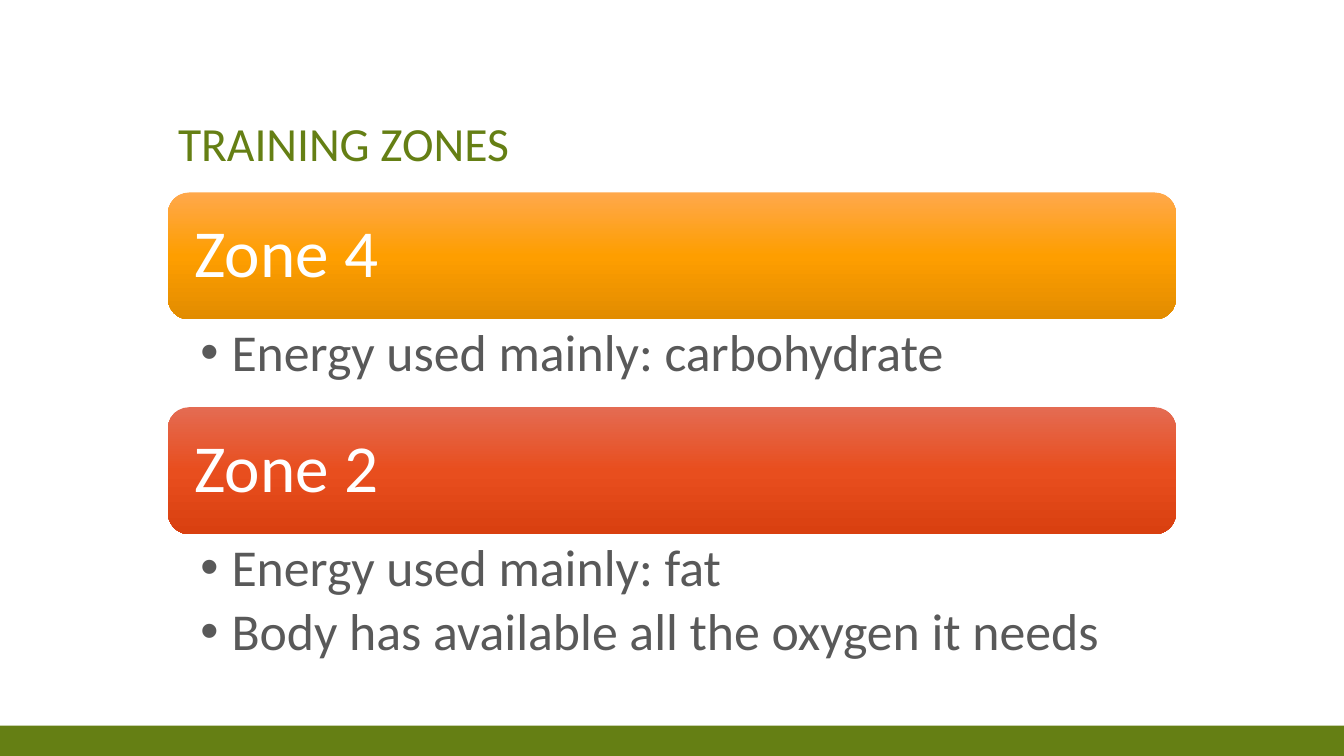
from dataclasses import dataclass

from lxml.etree import SubElement
from pptx import Presentation
from pptx.dml.color import RGBColor
from pptx.enum.shapes import MSO_SHAPE as Shape
from pptx.enum.text import MSO_ANCHOR as Anchor, MSO_AUTO_SIZE as Fit, PP_ALIGN as Align
from pptx.oxml.ns import qn
from pptx.util import Inches, Pt

WIDE, HIGH = 13.33, 7.5
COL = WIDE / 8  # eight columns: one of margin on each side


@dataclass(frozen=True)
class Theme:
    font: str = "Calibri"
    green: str = "657F14"
    white: str = "FFFFFF"
    grey: str = "595959"
    orange: tuple = ("FFA84B", "FE9E00", "E28C00")
    red: tuple = ("E46B52", "E84E1E", "D94010")
    title: int = 34
    head: int = 48
    body: int = 37


THEME = Theme()

ZONES = [
    ("Zone 4", THEME.orange, ["Energy used mainly: carbohydrate"], 0.87),
    ("Zone 2", THEME.red,
     ["Energy used mainly: fat", "Body has available all the oxygen it needs"], 1.41),
]


def place(shape, box):
    shape.left, shape.top, shape.width, shape.height = map(Inches, box)


def write(shape, lines, size, color, anchor=Anchor.TOP, pad=(0.1, 0.05, 0.1, 0.05),
          after=0, bullet=False):
    """Fill a shape with paragraphs; pad is left, top, right, bottom in inches."""
    frame = shape.text_frame
    frame.text = "\n".join(lines)
    frame.word_wrap, frame.auto_size = True, Fit.NONE
    frame.vertical_anchor = anchor
    (frame.margin_left, frame.margin_top,
     frame.margin_right, frame.margin_bottom) = map(Inches, pad)
    for para in frame.paragraphs:
        para.alignment = Align.LEFT
        para.line_spacing = 0.9
        para.space_before, para.space_after = Pt(0), Pt(after)
        font = para.runs[0].font
        font.name, font.size = THEME.font, Pt(size)
        font.color.rgb = RGBColor.from_string(color)
        if bullet:
            para.level = 1
            add_bullet(para)


def add_bullet(para):
    props = para._p.get_or_add_pPr()
    props.set("marL", str(Inches(0.31)))
    props.set("indent", str(-Inches(0.31)))
    SubElement(props, qn("a:buFont")).set("typeface", "Arial")
    SubElement(props, qn("a:buChar")).set("char", "•")


def shade(shape, colors):
    """Fill from top to bottom with evenly spaced colours."""
    shape.fill.gradient()
    shape.fill.gradient_angle = 270
    stops = shape._element.spPr.find(qn("a:gradFill")).find(qn("a:gsLst"))
    for stop in list(stops):
        stops.remove(stop)
    for i, color in enumerate(colors):
        stop = SubElement(stops, qn("a:gs"), pos=str(100000 * i // (len(colors) - 1)))
        SubElement(stop, qn("a:srgbClr"), val=color)


def add_block(slide, kind, box):
    block = slide.shapes.add_shape(kind, *map(Inches, box))
    block.shadow.inherit = False
    block.line.fill.background()
    return block


def add_band(slide, box):
    band = add_block(slide, Shape.RECTANGLE, box)
    band.fill.solid()
    band.fill.fore_color.rgb = RGBColor.from_string(THEME.green)


def add_title(slide, text, box):
    title = slide.shapes.title
    place(title, box)
    write(title, [text], THEME.title, THEME.green, anchor=Anchor.BOTTOM)


def add_zone(slide, body, name, colors, points, box):
    """Place a heading bar with its bullet list below it."""
    left, top, width, height = box
    bar = 1.26
    head = add_block(slide, Shape.ROUNDED_RECTANGLE, (left, top, width, bar))
    shade(head, colors)
    write(head, [name], THEME.head, THEME.white, anchor=Anchor.MIDDLE,
          pad=(0.2, 0.2, 0.2, 0.2))
    place(body, (left, top + bar, width, height - bar))
    write(body, points, THEME.body, THEME.grey, pad=(0.32, 0.07, 0.37, 0.07),
          after=6, bullet=True)


def add_zones(slide, box):
    left, top, width, _ = box
    bodies = [hold for hold in slide.placeholders if hold.placeholder_format.idx > 0]
    for body, (name, colors, points, depth) in zip(bodies, ZONES):
        height = 1.26 + depth
        add_zone(slide, body, name, colors, points, (left, top, width, height))
        top += height


def main():
    deck = Presentation()
    deck.slide_width, deck.slide_height = Inches(WIDE), Inches(HIGH)
    slide = deck.slides.add_slide(deck.slide_layouts.get_by_name("Two Content"))
    add_band(slide, (0, HIGH * 0.96, WIDE, HIGH * 0.04))
    add_title(slide, "TRAINING ZONES", (COL, 0.5, 6 * COL, 1.25))
    add_zones(slide, (COL, 1.91, 6 * COL, 4.8))
    deck.save("out.pptx")


if __name__ == "__main__":
    main()
